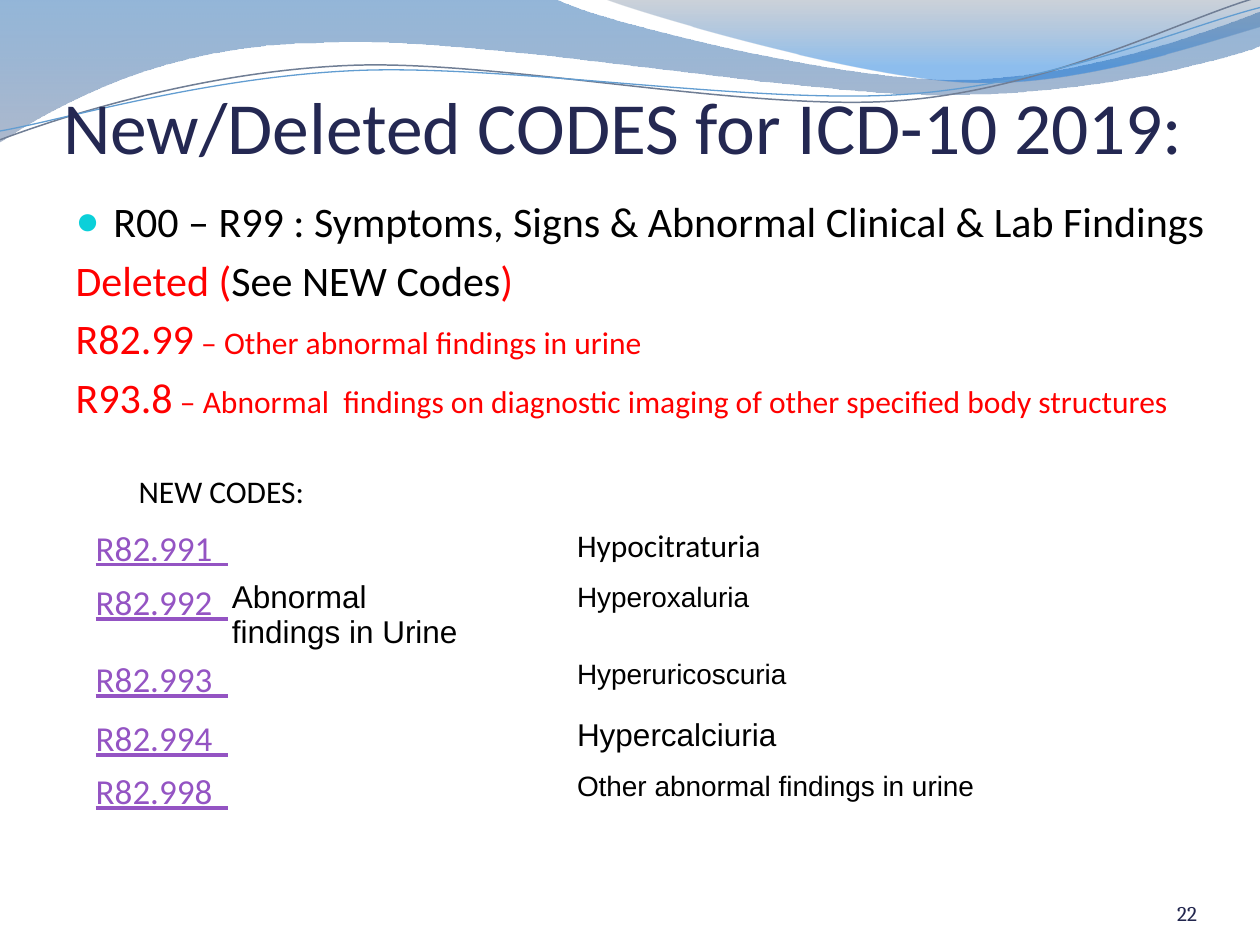
from lxml.etree import SubElement
from pptx import Presentation
from pptx.dml.color import RGBColor
from pptx.enum.text import MSO_ANCHOR, MSO_AUTO_SIZE, PP_ALIGN
from pptx.oxml.ns import qn
from pptx.util import Inches, Pt

NAVY = RGBColor(0x24, 0x28, 0x52)
NUMBER_NAVY = RGBColor(0x22, 0x26, 0x4E)
BLACK = RGBColor(0, 0, 0)
WHITE = RGBColor(255, 255, 255)
RED = RGBColor(255, 0, 0)
PURPLE = RGBColor(0x94, 0x54, 0xC3)
DEEP_BLUE = RGBColor(0x12, 0x5E, 0xAA)
STEEL = RGBColor(0x69, 0x7F, 0xA4)
SLATE = RGBColor(0x59, 0x69, 0x82)
BRIGHT_BLUE = RGBColor(0x06, 0x70, 0xDA)
LINE_GREY = RGBColor(0x70, 0x7E, 0x95)
LINE_BLUE = RGBColor(0x62, 0x9D, 0xD1)

FILLED_WAVES = [
    ([(0, -0.01), (4.4, -0.01), (4.76, 0.17, 6.64, 0.63, 7.58, 0.63),
      (8.53, 0.63, 9.58, 0.26, 10, 0.09), (10.01, 0.36),
      (9.83, 0.44, 8.7, 0.76, 7.46, 0.75), (6.22, 0.75, 3.82, 0.28, 2.57, 0.34),
      (1.29, 0.35, 0.46, 0.83, -0.01, 1.13)],
     [(0, DEEP_BLUE, 45), (1, STEEL, 55)]),
    ([(4.79, -0.01), (5.09, 0.11, 6.82, 0.62, 7.69, 0.65),
      (8.56, 0.69, 9.61, 0.32, 10, 0.21), (10, 0)],
     [(0, SLATE, 30), (0.8, BRIGHT_BLUE, 45)]),
]
LINE_WAVES = [
    ([(0, 1.11), (0.48, 0.93, 1.58, 0.57, 2.77, 0.52),
      (3.95, 0.47, 5.93, 0.89, 7.13, 0.8), (8.33, 0.71, 9.38, 0.15, 9.98, -0.02)],
     LINE_GREY, 0.85),
    ([(0, 1.04), (0.47, 0.96, 1.64, 0.61, 2.83, 0.56),
      (4.03, 0.51, 5.97, 0.83, 7.17, 0.75), (8.36, 0.67, 9.41, 0.21, 10, 0.06)],
     LINE_BLUE, 0.75),
]
BODY_LINES = [
    [("R00 – R99 : Symptoms, Signs & Abnormal Clinical & Lab Findings", 24, BLACK)],
    [("Deleted (", 24, RED), ("See NEW Codes", 24, BLACK), (")", 24, RED)],
    [("R82.99", 24, RED), (" – Other abnormal findings in urine", 18, RED)],
    [("R93.8", 24, RED),
     (" – Abnormal  findings on diagnostic imaging of other specified body structures",
      18, RED)],
    [("\tNEW CODES:", 18, BLACK)],
]
CODE_ROWS = [
    ("R82.991", "", "Hypocitraturia", 18, "Calibri", 0.43),
    ("R82.992", "Abnormal findings in Urine", "Hyperoxaluria", 16, "Arial", 0.47),
    ("R82.993", "", "Hyperuricoscuria", 16, "Arial", 0.47),
    ("R82.994", "", "Hypercalciuria", 18, "Arial", 0.42),
    ("R82.998", "", "Other abnormal findings in urine", 16, "Arial", 0.46),
]
COLUMN_WIDTHS = [1.08, 1.85, 0.89, 3.24]


def style(span, size, color, font="Calibri"):
    """Set the font, size and colour of a run."""
    span.font.name = font
    span.font.size = Pt(size)
    span.font.color.rgb = color


def place(shape, box):
    """Move a shape to a box given in inches."""
    shape.left, shape.top, shape.width, shape.height = map(Inches, box)


def set_margins(target, left, top, right, bottom):
    """Set the inner margins of a text frame or table cell in inches."""
    target.margin_left, target.margin_top = Inches(left), Inches(top)
    target.margin_right, target.margin_bottom = Inches(right), Inches(bottom)


def add_wave(page, segments, left, top, closed):
    """Add one outline of lines and cubic curves, shifted to the given corner."""
    anchors = [(Inches(left + s[-2]), Inches(top + s[-1])) for s in segments]
    builder = page.shapes.build_freeform(*anchors[0])
    builder.add_line_segments(anchors[1:], close=closed)
    wave = builder.convert_to_shape()
    wave.shadow.inherit = False
    edges = list(wave.element.spPr.iter(qn("a:lnTo")))
    for edge, segment in zip(edges, segments[1:]):
        if len(segment) == 6:
            edge.tag = qn("a:cubicBezTo")
            edge.clear()
            for x, y in zip(segment[::2], segment[1::2]):
                SubElement(edge, qn("a:pt"), x=str(Inches(left + x) - wave.left),
                           y=str(Inches(top + y) - wave.top))
    return wave


def add_banner(page, left, top):
    """Draw the translucent waves and thin lines across the top."""
    for segments, stops in FILLED_WAVES:
        wave = add_wave(page, segments, left, top, True)
        wave.line.fill.background()
        wave.fill.gradient()
        wave.fill.gradient_angle = 270
        for stop, (position, color, _) in zip(wave.fill.gradient_stops, stops):
            stop.position = position
            stop.color.rgb = color
        colors = wave.element.spPr.iter(qn("a:srgbClr"))
        for color, (_, _, opacity) in zip(list(colors), stops):
            SubElement(color, qn("a:alpha"), val=str(opacity * 1000))
    for segments, color, width in LINE_WAVES:
        wave = add_wave(page, segments, left, top, False)
        wave.fill.background()
        wave.line.color.rgb = color
        wave.line.width = Pt(width)


def fill_title(title, box):
    """Place and format the slide title."""
    place(title, box)
    frame = title.text_frame
    frame.text = "New/Deleted CODES for ICD-10 2019:"
    frame.auto_size = MSO_AUTO_SIZE.NONE
    frame.vertical_anchor = MSO_ANCHOR.BOTTOM
    set_margins(frame, 0, 0.05, 0, 0)
    frame.paragraphs[0].alignment = PP_ALIGN.LEFT
    style(frame.paragraphs[0].runs[0], 42, NAVY)


def set_bullet(paragraph, bulleted):
    """Give a paragraph a hanging turquoise bullet, or none."""
    properties = paragraph._p.get_or_add_pPr()
    indent = Inches(0.3) if bulleted else 0
    properties.set("marL", str(indent))
    properties.set("indent", str(-indent))
    if bulleted:
        color = SubElement(properties, qn("a:buClr"))
        SubElement(color, qn("a:srgbClr"), val="0BD0D9")
        SubElement(properties, qn("a:buSzPct"), val="95000")
        SubElement(properties, qn("a:buFont"), typeface="Arial")
        SubElement(properties, qn("a:buChar"), char="●")
    else:
        SubElement(properties, qn("a:buNone"))
        tabs = SubElement(properties, qn("a:tabLst"))
        SubElement(tabs, qn("a:tab"), pos=str(Inches(1)), algn="l")


def fill_body(body, box):
    """Place the body and write its list of deleted codes."""
    place(body, box)
    frame = body.text_frame
    frame.auto_size = MSO_AUTO_SIZE.NONE
    for index, line in enumerate(BODY_LINES):
        paragraph = frame.add_paragraph() if index else frame.paragraphs[0]
        last = index == len(BODY_LINES) - 1
        paragraph.space_before = Pt(28.5 if last else 4.8)
        set_bullet(paragraph, index == 0)
        for text, size, color in line:
            span = paragraph.add_run()
            span.text = text
            style(span, size, color)


def add_code_table(page, box):
    """Add the table of new codes."""
    holder = page.shapes.add_table(len(CODE_ROWS), len(COLUMN_WIDTHS), *map(Inches, box))
    table = holder.table
    table.first_row = table.horz_banding = False
    for column, width in zip(table.columns, COLUMN_WIDTHS):
        column.width = Inches(width)
    for row, (code, group, finding, size, font, height) in zip(table.rows, CODE_ROWS):
        row.height = Inches(height)
        contents = [(code + "\u00a0" * 2, 20, PURPLE, "Calibri"), (group, 18, BLACK, "Arial"),
                    ("", 18, BLACK, "Arial"), (finding, size, BLACK, font)]
        for cell, (text, *look) in zip(row.cells, contents):
            cell.fill.solid()
            cell.fill.fore_color.rgb = WHITE
            top, bottom = (0.01, 0) if text == group else (0.03, 0.03)
            set_margins(cell, 0.01, top, 0.01, bottom)
            if text:
                cell.text_frame.text = text
                style(cell.text_frame.paragraphs[0].runs[0], *look)
        row.cells[0].text_frame.paragraphs[0].runs[0].font.underline = True
    place(holder, box)


def add_page_number(page, box):
    """Add the page number at the lower right."""
    frame = page.shapes.add_textbox(*map(Inches, box)).text_frame
    frame.text = "22"
    frame.word_wrap = True
    frame.vertical_anchor = MSO_ANCHOR.BOTTOM
    set_margins(frame, 0, 0, 0, 0)
    frame.paragraphs[0].alignment = PP_ALIGN.RIGHT
    style(frame.paragraphs[0].runs[0], 12, NUMBER_NAVY, "Cambria")


def main():
    """Build the slide and save it."""
    deck = Presentation()
    deck.slide_width, deck.slide_height = Inches(10), Inches(7.5)
    page = deck.slides.add_slide(deck.slide_layouts[1])
    title, body = page.placeholders
    add_banner(page, 0, 0)
    for placeholder in (title, body):
        page.shapes._spTree.append(placeholder.element)
    fill_title(title, (0.5, 0.17, 9, 1.17))
    fill_body(body, (0.5, 1.5, 9.5, 5.31))
    add_page_number(page, (8.67, 6.95, 0.83, 0.4))
    add_code_table(page, (0.75, 4.16, 7.06, 2.38))
    deck.save("out.pptx")


if __name__ == "__main__":
    main()
